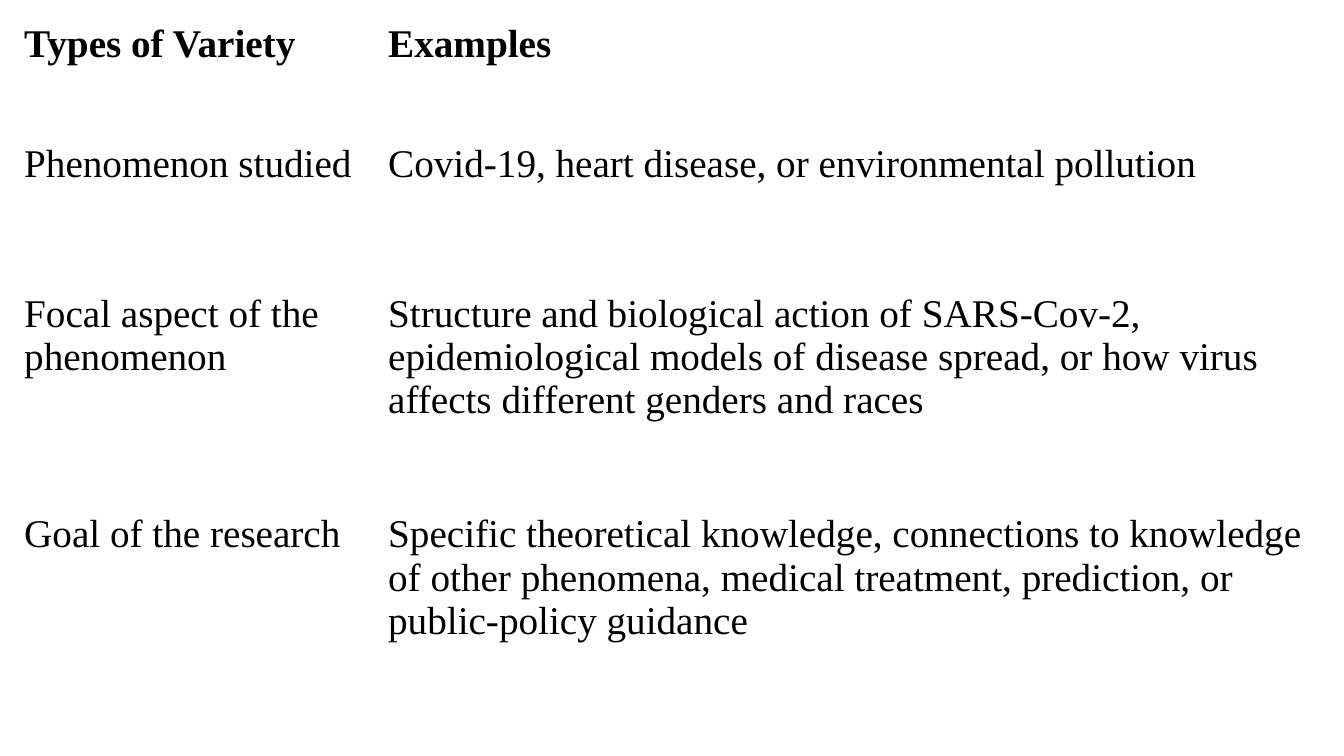
from lxml import etree
from pptx import Presentation
from pptx.dml.color import RGBColor
from pptx.oxml import ns
from pptx.util import Inches, Pt

BLACK = RGBColor(0x00, 0x00, 0x00)
WHITE = RGBColor(0xFF, 0xFF, 0xFF)
FONT = "Times New Roman"
COLUMN_WIDTHS = [3.61, 9.44]
ROW_HEIGHTS = [0.72, 1.49, 2.19, 2.19]
HEADER_TOP_MARGIN = 0.05
BODY_TOP_MARGIN = 0.52
ROWS = [
    ("Types of Variety", "Examples"),
    ("Phenomenon studied", "Covid-19, heart disease, or environmental pollution"),
    (
        "Focal aspect of the phenomenon",
        "Structure and biological action of SARS-Cov-2, epidemiological models of "
        "disease spread, or how virus affects different genders and races",
    ),
    (
        "Goal of the research",
        "Specific theoretical knowledge, connections to knowledge of other phenomena, "
        "medical treatment, prediction, or public-policy guidance",
    ),
]


def set_borders(cell, color, width):
    """Draw the four borders of a cell in one colour and width."""
    properties = cell._tc.get_or_add_tcPr()
    for position, side in enumerate(("lnL", "lnR", "lnT", "lnB")):
        line = etree.Element(ns.qn(f"a:{side}"), w=str(width))
        fill = etree.SubElement(line, ns.qn("a:solidFill"))
        etree.SubElement(fill, ns.qn("a:srgbClr"), val=str(color))
        properties.insert(position, line)


def fill_cell(cell, content, is_header):
    """Write one cell as a header or as body text."""
    cell.fill.background()
    cell.margin_top = Inches(HEADER_TOP_MARGIN if is_header else BODY_TOP_MARGIN)
    set_borders(cell, WHITE, Pt(0.75))
    run = cell.text_frame.paragraphs[0].add_run()
    run.text = content
    run.font.name = FONT
    run.font.size = Pt(28)
    run.font.bold = is_header
    run.font.color.rgb = BLACK


def add_variety_table(slide):
    """Add the table of variety types and their examples."""
    table = slide.shapes.add_table(
        len(ROWS), len(COLUMN_WIDTHS), Inches(0.14), Inches(0.17),
        Inches(sum(COLUMN_WIDTHS)), Inches(sum(ROW_HEIGHTS)),
    ).table
    table.horz_banding = False
    for column, width in zip(table.columns, COLUMN_WIDTHS):
        column.width = Inches(width)
    for row_index, (row, height) in enumerate(zip(table.rows, ROW_HEIGHTS)):
        row.height = Inches(height)
        for cell, content in zip(row.cells, ROWS[row_index]):
            fill_cell(cell, content, row_index == 0)


def main():
    """Build the slide and save it."""
    presentation = Presentation()
    presentation.slide_width = Inches(13.33)
    presentation.slide_height = Inches(7.5)
    slide = presentation.slides.add_slide(presentation.slide_layouts[6])
    add_variety_table(slide)
    presentation.save("out.pptx")


if __name__ == "__main__":
    main()
